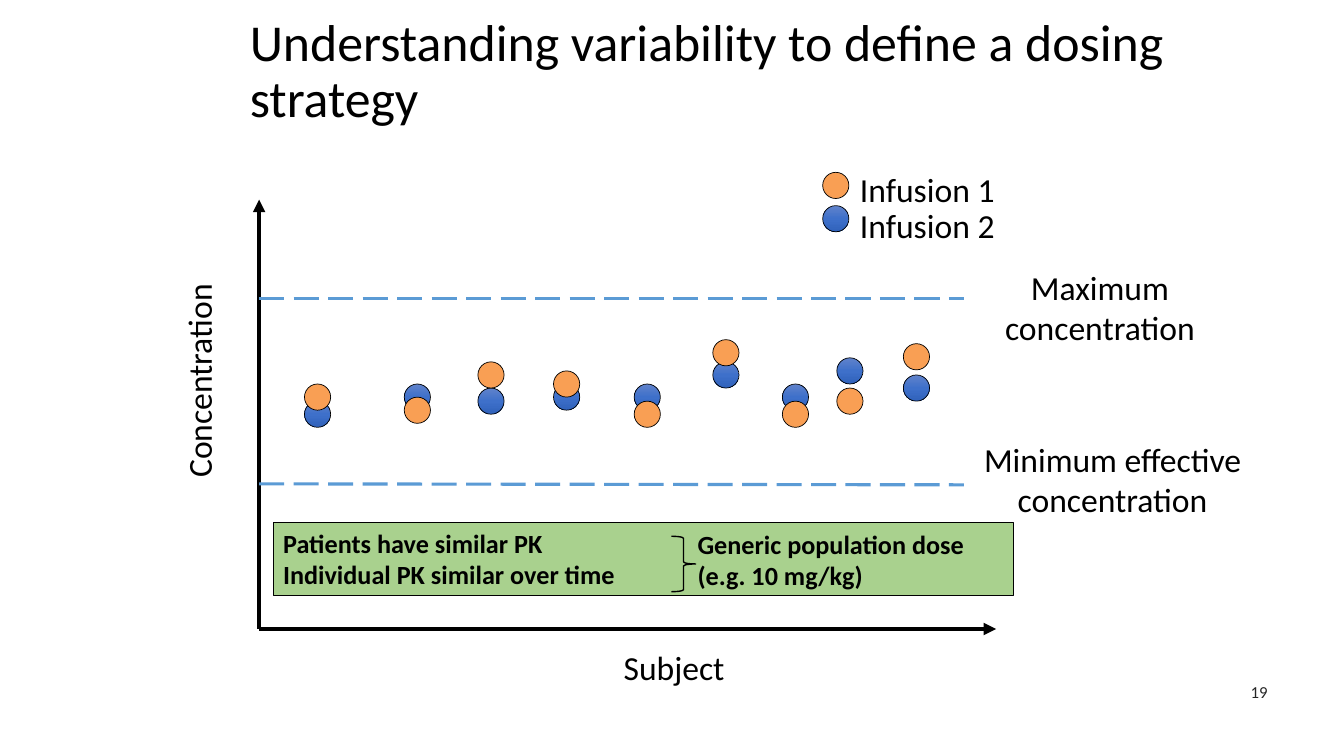
from copy import deepcopy

from pptx import Presentation
from pptx.dml.color import RGBColor
from pptx.enum.dml import MSO_LINE
from pptx.enum.shapes import MSO_CONNECTOR, MSO_SHAPE
from pptx.enum.text import MSO_ANCHOR, PP_ALIGN
from pptx.oxml.ns import qn
from pptx.oxml.xmlchemy import OxmlElement
from pptx.util import Inches, Pt

BLACK, GREEN, DASH = "000000", "A9D18E", "5B9BD5"
ORANGE = ["F99F54"]
BLUE = ["6183CB", "3E70CA", "3062BB"]
DOT = 0.26

TITLE = "Understanding variability to define a dosing strategy"
# One subject each: left, top for infusion 1, top for infusion 2
SUBJECTS = [
    (3.02, 3.81, 3.98), (4.01, 3.94, 3.81), (4.74, 3.59, 3.85),
    (5.49, 3.68, 3.81), (6.29, 3.98, 3.81), (7.07, 3.37, 3.59),
    (7.76, 3.98, 3.81), (8.30, 3.85, 3.55), (8.96, 3.41, 3.72),
]
# Name, colours, dot top, label top
LEGEND = [("Infusion 1", ORANGE, 1.71, 1.63), ("Infusion 2", BLUE, 2.04, 1.98)]
# Text, box
LIMITS = [
    ("Minimum effective concentration", (9.56, 4.3, 2.95, 0.91)),
    ("Maximum concentration", (9.56, 2.6, 2.7, 0.91)),
]
FINDINGS = ["Patients have similar PK", "Individual PK similar over time"]
DOSE = ["Generic population dose", "(e.g. 10 mg/kg)"]
ORIGIN = (2.57, 6.24)
AXES = [(2.57, 1.98), (9.88, 6.24)]
BOUNDS = [(2.96, 2.96), (4.8, 4.81)]
BOUND_END = 9.56

deck = Presentation()
deck.slide_width, deck.slide_height = Inches(13.33), Inches(7.5)
slide = deck.slides.add_slide(deck.slide_layouts[6])
shapes = slide.shapes


def color(code):
    return RGBColor.from_string(code)


def write(shape, lines, size=24, bold=False, tint=BLACK, align=PP_ALIGN.LEFT,
          anchor=MSO_ANCHOR.TOP, spacing=None):
    frame = shape.text_frame
    frame.word_wrap = True
    frame.vertical_anchor = anchor
    for i, line in enumerate(lines):
        para = frame.add_paragraph() if i else frame.paragraphs[0]
        para.text = line
        para.alignment = align
        para.line_spacing = spacing
        font = para.font
        font.name, font.size, font.bold = "Calibri", Pt(size), bold
        font.color.rgb = color(tint)


def label(lines, box, **style):
    shape = shapes.add_textbox(*map(Inches, box))
    write(shape, lines, **style)
    return shape


def draw(kind, box, fills, width):
    """Add a black-edged shape: no fill, a plain one, or a downward gradient."""
    shape = shapes.add_shape(kind, *map(Inches, box))
    shape.shadow.inherit = False
    shape.line.color.rgb = color(BLACK)
    shape.line.width = Pt(width)
    fill = shape.fill
    if not fills:
        fill.background()
    elif len(fills) == 1:
        fill.solid()
        fill.fore_color.rgb = color(fills[0])
    else:
        fill.gradient()
        fill.gradient_angle = 270
        stops = shape._element.spPr.find(qn("a:gradFill")).find(qn("a:gsLst"))
        stops.append(deepcopy(stops[-1]))
        for i, (stop, code) in enumerate(zip(fill.gradient_stops, fills)):
            stop.position = i / (len(fills) - 1)
            stop.color.rgb = color(code)
    return shape


def dot(left, top, fills):
    draw(MSO_SHAPE.OVAL, (left, top, DOT, DOT), fills, 0.5)


def rule(start, end, tint, width, dash=None, arrow=False):
    line = shapes.add_connector(MSO_CONNECTOR.STRAIGHT, *map(Inches, start + end))
    line.line.color.rgb = color(tint)
    line.line.width = Pt(width)
    if dash:
        line.line.dash_style = dash
    if arrow:
        tip = OxmlElement("a:tailEnd")
        tip.set("type", "triangle")
        line.line._get_or_add_ln().append(tip)
    line._element.spPr.append(OxmlElement("a:effectLst"))


label([TITLE], (2.38, 0, 10.03, 1.45), size=37, anchor=MSO_ANCHOR.MIDDLE, spacing=0.9)
label(["19"], (9.56, 6.66, 3.11, 0.4), size=12, tint="262626",
      align=PP_ALIGN.RIGHT, anchor=MSO_ANCHOR.MIDDLE)

for end in AXES:
    rule(ORIGIN, end, BLACK, 3, arrow=True)
label(["Concentration"], (0.7, 3.53, 2.54, 0.5), align=PP_ALIGN.CENTER).rotation = 270
label(["Subject"], (5.74, 6.37, 1.89, 0.5), align=PP_ALIGN.CENTER)

for left, right in BOUNDS:
    rule((ORIGIN[0], left), (BOUND_END, right), DASH, 2.25, dash=MSO_LINE.LONG_DASH)
for text, box in LIMITS:
    label([text], box, align=PP_ALIGN.CENTER)

for x, first, second in SUBJECTS:
    dot(x, second, BLUE)
    dot(x, first, ORANGE)

panel = draw(MSO_SHAPE.RECTANGLE, (2.71, 5.18, 7.34, 0.73), [GREEN], 0.75)
write(panel, FINDINGS, size=18.7, bold=True)
draw(MSO_SHAPE.RIGHT_BRACE, (6.66, 5.32, 0.24, 0.55), None, 1)
label(DOSE, (6.82, 5.19, 4.1, 0.73), size=18.7, bold=True)

for name, fills, top, text_top in LEGEND:
    dot(8.16, top, fills)
    label([name], (8.43, text_top, 1.89, 0.5))

deck.save("out.pptx")
